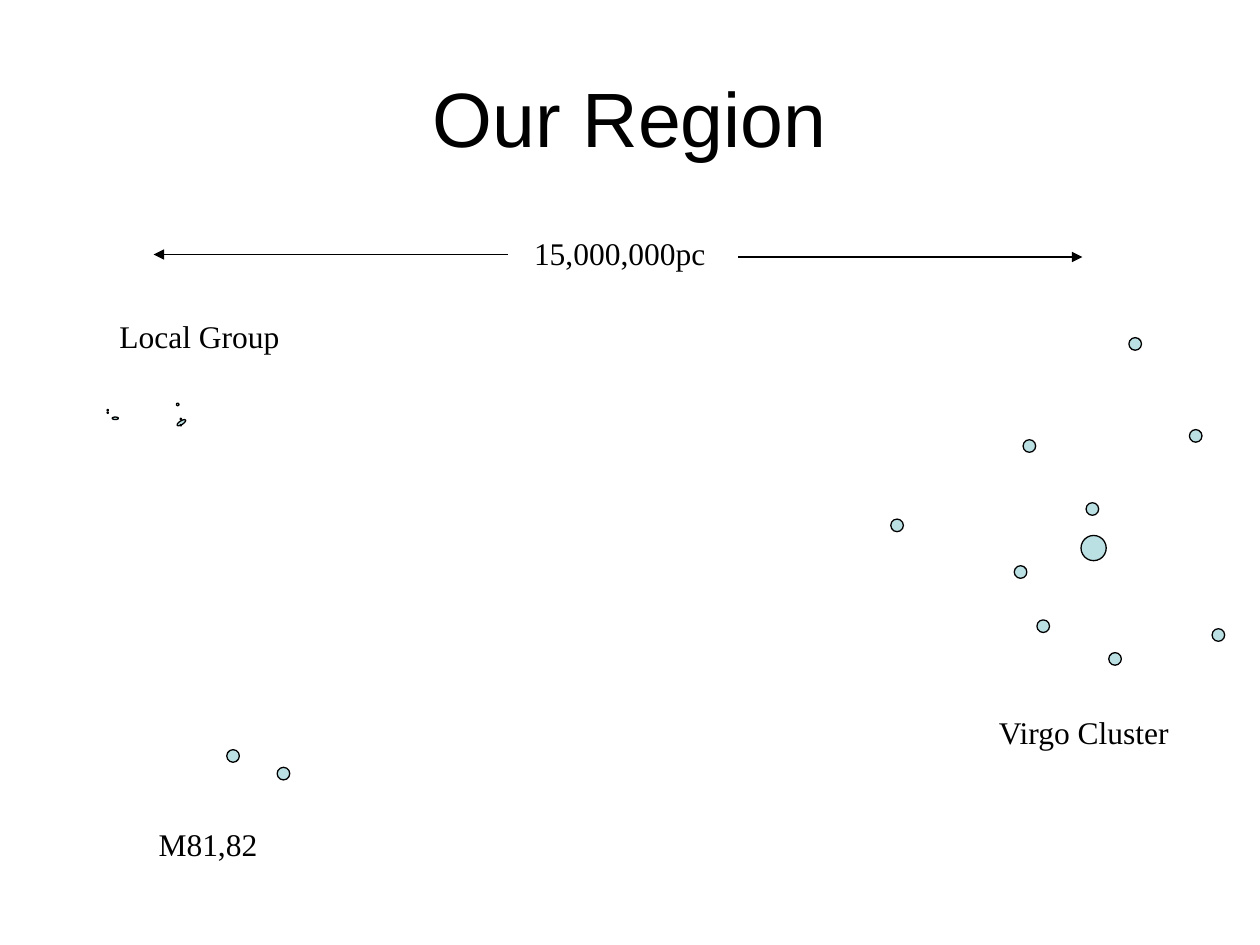
from lxml.etree import SubElement
from pptx import Presentation
from pptx.dml.color import RGBColor
from pptx.enum.shapes import MSO_CONNECTOR, MSO_SHAPE
from pptx.enum.text import MSO_ANCHOR, MSO_AUTO_SIZE, PP_ALIGN
from pptx.oxml.ns import qn
from pptx.util import Inches, Pt

BLACK = RGBColor(0x00, 0x00, 0x00)
PALE_BLUE = RGBColor(0xBB, 0xE0, 0xE3)
WHITE = RGBColor(0xFF, 0xFF, 0xFF)

GALAXY = 0.1
# Galaxies: left, top, width, height, rotation, relative to their region
LOCAL_GALAXIES = [
    (0.04, 0.84, 0.05, 0.02, 0),
    (0.55, 0.87, 0.08, 0.03, 327.7),
    (0.55, 0.73, 0.02, 0.02, 0),
    (0, 0.8, 0.01, 0.01, 0),
    (0, 0.78, 0.01, 0.01, 0),
    (0.58, 0.9, 0.01, 0.01, 0),
    (0.58, 0.85, 0.01, 0.01, 0),
]
VIRGO_CENTRE = (1.51, 1.57, 0.2, 0.2, 0)
VIRGO_GALAXIES = [(1.05, 0.81), (1.89, 0), (0.98, 1.81), (1.55, 1.31),
                  (2.37, 0.73), (1.73, 2.5), (1.16, 2.24), (0, 1.44),
                  (2.55, 2.31)]
M81_GALAXIES = [(1.04, 0.14), (0.64, 0)]


def set_text(tf, text, size=18, font="Times New Roman", align=PP_ALIGN.LEFT):
    p = tf.paragraphs[0]
    p.alignment = align
    r = p.add_run()
    r.text = text
    r.font.size = Pt(size)
    r.font.name = font
    r.font.color.rgb = BLACK


def add_title(s, left, top, width, height):
    title = s.shapes.title
    title.left, title.top = Inches(left), Inches(top)
    title.width, title.height = Inches(width), Inches(height)
    title.text_frame.vertical_anchor = MSO_ANCHOR.MIDDLE
    set_text(title.text_frame, "Our Region", size=44, font="Arial",
             align=PP_ALIGN.CENTER)


def add_label(s, text, left, top, width):
    box = s.shapes.add_textbox(Inches(left), Inches(top),
                               Inches(width), Inches(0.4))
    tf = box.text_frame
    tf.word_wrap = False
    tf.auto_size = MSO_AUTO_SIZE.SHAPE_TO_FIT_TEXT
    set_text(tf, text)


def add_galaxy(shapes, left, top, width=GALAXY, height=GALAXY, rotation=0):
    sp = shapes.add_shape(MSO_SHAPE.OVAL, Inches(left), Inches(top),
                          Inches(width), Inches(height))
    sp.rotation = rotation
    sp.shadow.inherit = False
    sp.fill.solid()
    sp.fill.fore_color.rgb = PALE_BLUE
    sp.line.color.rgb = BLACK
    sp.line.width = Pt(0.75)


def add_galaxies(shapes, left, top, galaxies):
    for x, y, *form in galaxies:
        add_galaxy(shapes, left + x, top + y, *form)


def add_arrow(s, start, end, y):
    line = s.shapes.add_connector(MSO_CONNECTOR.STRAIGHT, Inches(start),
                                  Inches(y), Inches(end), Inches(y))
    line.line.color.rgb = BLACK
    line.line.width = Pt(0.75)
    SubElement(line.line._get_or_add_ln(), qn("a:tailEnd"), type="triangle")
    SubElement(line._element.spPr, qn("a:effectLst"))


def add_scale(s, left, top, width):
    add_label(s, "15,000,000pc", left + 2.92, top, 1.56)
    add_arrow(s, left + 2.81, left, top + 0.21)
    add_arrow(s, left + 4.64, left + width, top + 0.23)


def add_local_group(s, left, top):
    group = s.shapes.add_group_shape()
    add_galaxies(group.shapes, left, top, LOCAL_GALAXIES)
    add_label(s, "Local Group", left, top, 1.47)


def add_virgo_cluster(s, left, top):
    add_galaxies(s.shapes, left, top, [VIRGO_CENTRE] + VIRGO_GALAXIES)
    add_label(s, "Virgo Cluster", left + 0.76, top + 2.93, 1.57)


def add_m81_group(s, left, top):
    add_galaxies(s.shapes, left, top, M81_GALAXIES)
    add_label(s, "M81,82", left, top + 0.55, 0.99)


def main():
    prs = Presentation()
    prs.slide_width, prs.slide_height = Inches(10), Inches(7.5)
    s = prs.slides.add_slide(prs.slide_layouts[5])
    s.background.fill.solid()
    s.background.fill.fore_color.rgb = WHITE
    add_title(s, 0.5, 0.3, 9, 1.25)
    add_local_group(s, 0.85, 2.47)
    add_virgo_cluster(s, 7.07, 2.68)
    add_m81_group(s, 1.16, 5.95)
    add_scale(s, 1.22, 1.81, 7.37)
    prs.save("out.pptx")


if __name__ == "__main__":
    main()
